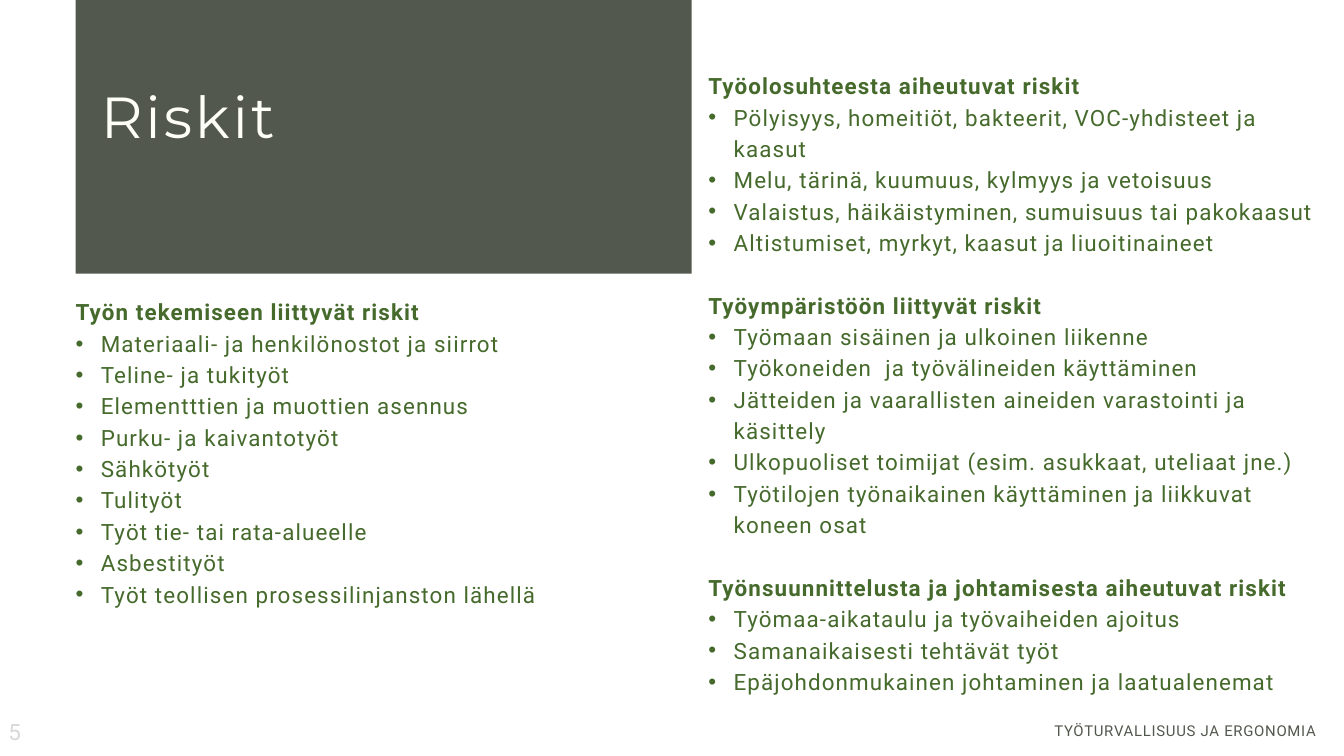
"""Build the slide on occupational safety risks."""
import pptx
import pptx.util
import pptx.dml.color
import pptx.enum.shapes
import pptx.enum.text
import lxml.etree

PX = 9525
COLORS = {"panel": "52584D", "title": "FEFFF8", "body": "456A2C", "number": "D9D9D9"}
TITLE = "Riskit"
FOOTER = "TYÖTURVALLISUUS JA ERGONOMIA "
NUMBER = "5"
LEFT_RISKS = [
    ("Työn tekemiseen liittyvät riskit", [
        "Materiaali- ja henkilönostot ja siirrot",
        "Teline- ja tukityöt",
        "Elementttien ja muottien asennus",
        "Purku- ja kaivantotyöt",
        "Sähkötyöt",
        "Tulityöt",
        "Työt tie- tai rata-alueelle",
        "Asbestityöt",
        "Työt teollisen prosessilinjanston lähellä",
    ]),
]
RIGHT_RISKS = [
    ("Työolosuhteesta aiheutuvat riskit", [
        "Pölyisyys, homeitiöt, bakteerit, VOC-yhdisteet ja kaasut",
        "Melu, tärinä, kuumuus, kylmyys ja vetoisuus",
        "Valaistus, häikäistyminen, sumuisuus tai pakokaasut",
        "Altistumiset, myrkyt, kaasut ja liuoitinaineet",
    ]),
    ("Työympäristöön liittyvät riskit", [
        "Työmaan sisäinen ja ulkoinen liikenne",
        "Työkoneiden  ja työvälineiden käyttäminen",
        "Jätteiden ja vaarallisten aineiden varastointi ja käsittely",
        "Ulkopuoliset toimijat (esim. asukkaat, uteliaat jne.)",
        "Työtilojen työnaikainen käyttäminen ja liikkuvat koneen osat",
    ]),
    ("Työnsuunnittelusta ja johtamisesta aiheutuvat riskit", [
        "Työmaa-aikataulu ja työvaiheiden ajoitus",
        "Samanaikaisesti tehtävät työt",
        "Epäjohdonmukainen johtaminen ja laatualenemat",
    ]),
]
PANEL_BOX = (108, -29, 880, 420)
TITLE_BOX = (144, 103, 844, 109)
LEFT_BOX = (108, 420, 800, 454)
RIGHT_BOX = (1012, 97, 880, 866)
FOOTER_BOX = (1088, 1027, 799, 28)
NUMBER_BOX = (2, 1026, 224, 38)
INDENT = 36
LINE = 33.6


def rgb(name):
    return pptx.dml.color.RGBColor.from_string(COLORS[name])


def place(sp, box):
    sp.left, sp.top, sp.width, sp.height = [v * PX for v in box]


def setup_frame(sp, inset=0, anchor=pptx.enum.text.MSO_ANCHOR.TOP):
    tf = sp.text_frame
    tf.word_wrap = True
    tf.auto_size = pptx.enum.text.MSO_AUTO_SIZE.NONE
    tf.vertical_anchor = anchor
    tf.margin_left = tf.margin_right = inset * PX
    tf.margin_top = tf.margin_bottom = 0
    return tf


def add_run(p, text, size, color, font="Roboto", bold=False):
    r = p.add_run()
    r.text = text
    r.font.size = pptx.util.Pt(size)
    r.font.name = font
    r.font.bold = bold
    r.font.color.rgb = rgb(color)
    r.font._element.set("spc", str(round(size * 5)))


def set_bullet(p, bulleted):
    pPr = p._p.get_or_add_pPr()
    indent = INDENT * PX if bulleted else 0
    pPr.set("marL", str(indent))
    pPr.set("indent", str(-indent))
    ns = pptx.oxml.ns.qn
    if bulleted:
        lxml.etree.SubElement(pPr, ns("a:buFont")).set("typeface", "Arial")
        lxml.etree.SubElement(pPr, ns("a:buChar")).set("char", "•")
    else:
        lxml.etree.SubElement(pPr, ns("a:buNone"))


def fill_risks(sp, box, groups):
    place(sp, box)
    tf = setup_frame(sp)
    lines = [(text, text == heading) for heading, items in groups for text in [heading, *items]]
    for i, (text, is_heading) in enumerate(lines):
        p = tf.add_paragraph() if i else tf.paragraphs[0]
        p.line_spacing = pptx.util.Pt(LINE)
        p.space_before = pptx.util.Pt(LINE if i and is_heading else 0)
        set_bullet(p, not is_heading)
        add_run(p, text, 24, "body", bold=is_heading)


def add_label(slide, box, text, size, color, align, **frame):
    sp = slide.shapes.add_textbox(*[v * PX for v in box])
    p = setup_frame(sp, **frame).paragraphs[0]
    p.alignment = align
    add_run(p, text, size, color)
    return p


def main():
    prs = pptx.Presentation()
    prs.slide_width, prs.slide_height = 1920 * PX, 1080 * PX
    slide = prs.slides.add_slide(prs.slide_layouts[3])
    align = pptx.enum.text.PP_ALIGN

    panel = slide.shapes.add_shape(
        pptx.enum.shapes.MSO_SHAPE.RECTANGLE, *[v * PX for v in PANEL_BOX])
    panel.shadow.inherit = False
    panel.fill.solid()
    panel.fill.fore_color.rgb = rgb("panel")
    panel.line.fill.background()
    slide.shapes._spTree.insert(2, panel._element)

    title = slide.shapes.title
    place(title, TITLE_BOX)
    p = setup_frame(title).paragraphs[0]
    p.alignment = align.LEFT
    p.line_spacing = pptx.util.Pt(83.7)
    add_run(p, TITLE, 62, "title", font="Montserrat")

    fill_risks(slide.placeholders[1], LEFT_BOX, LEFT_RISKS)
    fill_risks(slide.placeholders[2], RIGHT_BOX, RIGHT_RISKS)

    footer = add_label(slide, FOOTER_BOX, FOOTER, 16, "panel", align.RIGHT)
    footer.line_spacing = pptx.util.Pt(22.4)
    add_label(slide, NUMBER_BOX, NUMBER, 24, "number", align.LEFT,
              inset=10, anchor=pptx.enum.text.MSO_ANCHOR.MIDDLE)
    prs.save("out.pptx")


if __name__ == "__main__":
    main()
